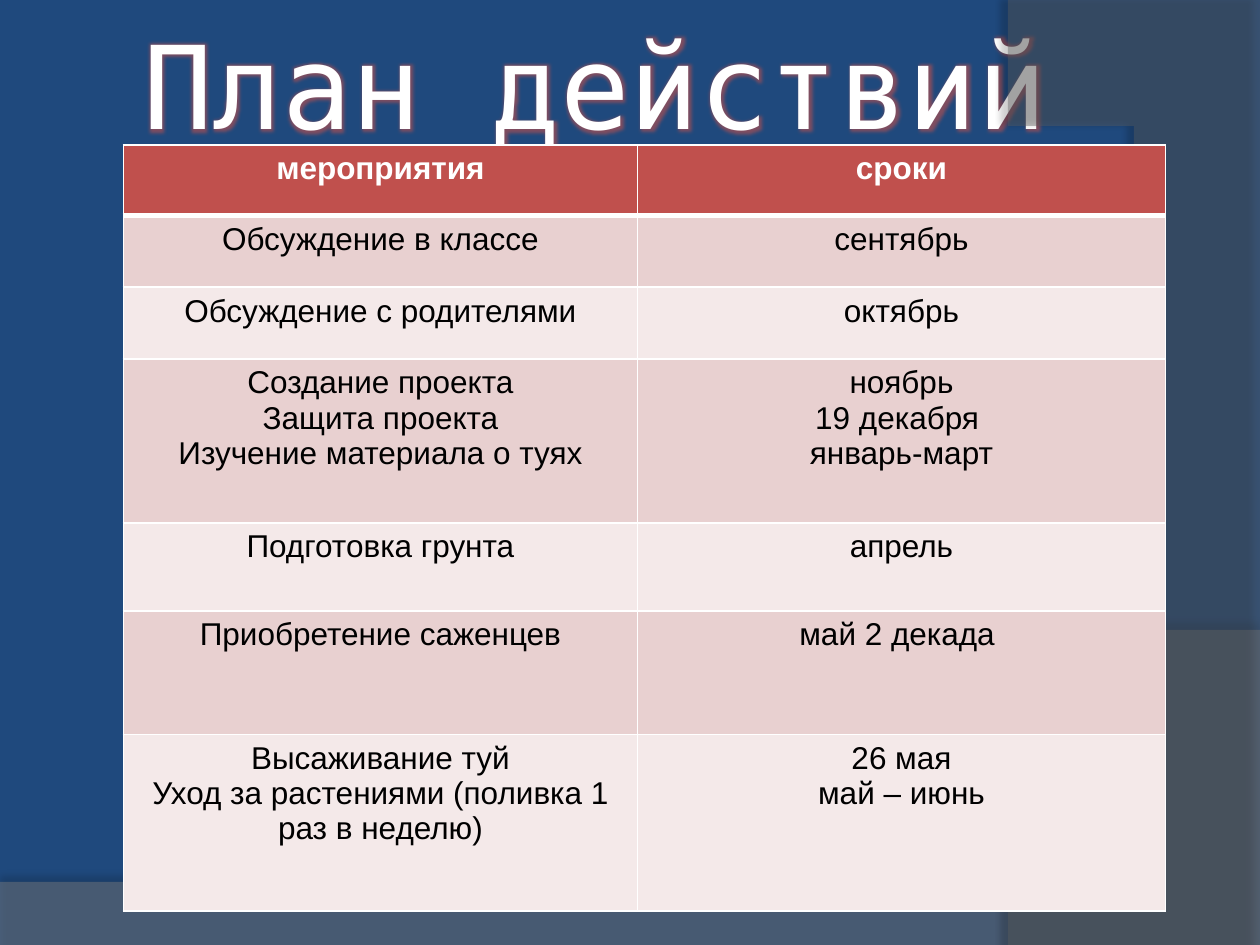
from lxml import etree
from pptx import Presentation
from pptx.dml.color import RGBColor
from pptx.enum.text import MSO_ANCHOR, PP_ALIGN
from pptx.oxml import parse_xml
from pptx.oxml.ns import qn
from pptx.util import Inches, Pt

CENTER = PP_ALIGN.CENTER
TOP = MSO_ANCHOR.TOP
DRAWING = "http://schemas.openxmlformats.org/drawingml/2006/main"

WIDTH, HEIGHT = 10, 7.5
TITLE = "План действий "
HEADER_COLOR, BAND_COLORS = "C0504D", ("E8D0D0", "F4E9E9")
ROWS = [
    (0.56, " мероприятия ", "сроки"),
    (0.57, "Обсуждение в классе", "сентябрь"),
    (0.57, "Обсуждение с родителями", "октябрь"),
    (1.3, "Создание проекта\nЗащита проекта\nИзучение материала о туях",
     "ноябрь\n19 декабря \nянварь-март"),
    (0.7, "Подготовка грунта", "апрель"),
    (0.98, "Приобретение саженцев", "май 2 декада "),
    (1.4, "Высаживание туй\nУход за растениями (поливка 1 раз в неделю)",
     "26 мая\nмай – июнь"),
]
COLUMN_WIDTHS = (4.08, 4.19)
TABLE_LEFT, TABLE_TOP = 0.98, 1.15

WAVES = [
    {"curve": [(10, 5.2), (5.59, 7.29), (3.91, 7.19), (0, 7.05)],
     "corners": [(0, 7.5), (10, 7.5)],
     "fill": "7F7F7F", "opacity": 45, "shadow": (35, 4, 3.5, 270)},
    {"curve": [(8.21, 7.5), (9.35, 6.19), (10.18, 3), (8, 0)],
     "corners": [(10, 0.02), (10, 7.5)],
     "fill": "5E5E5E", "opacity": 40, "shadow": (45, 4, 4, 180)},
]


def rgb(color):
    return RGBColor.from_string(color)


def color_xml(color, opacity=100):
    return (f'<a:srgbClr val="{color}"><a:alpha val="{opacity * 1000}"/>'
            '</a:srgbClr>')


def effect_list(content):
    return parse_xml(f'<a:effectLst xmlns:a="{DRAWING}">{content}</a:effectLst>')


def curve_points(controls, steps=60):
    for step in range(steps + 1):
        t = step / steps
        weights = ((1 - t) ** 3, 3 * t * (1 - t) ** 2, 3 * t * t * (1 - t), t ** 3)
        yield tuple(sum(w * point[axis] for w, point in zip(weights, controls))
                    for axis in (0, 1))


def add_wave(page, wave):
    points = list(curve_points(wave["curve"])) + wave["corners"]
    builder = page.shapes.build_freeform(*points[0], scale=Inches(1))
    builder.add_line_segments(points[1:], close=True)
    shape = builder.convert_to_shape()
    shape.fill.solid()
    shape.fill.fore_color.rgb = rgb(wave["fill"])
    color = shape.fill._xPr.find(qn("a:solidFill"))[0]
    etree.SubElement(color, qn("a:alpha"), val=str(wave["opacity"] * 1000))
    shape.line.fill.background()
    opacity, blur, distance, angle = wave["shadow"]
    shape._element.spPr.append(effect_list(
        f'<a:outerShdw blurRad="{Pt(blur)}" dist="{Pt(distance)}" '
        f'dir="{angle * 60000}" rotWithShape="0">'
        f'{color_xml("000000", opacity)}</a:outerShdw>'))


def add_title(page):
    title = page.shapes.title
    title.left, title.top = 0, 0
    title.width, title.height = Inches(WIDTH), Inches(1.75)
    frame = title.text_frame
    frame.word_wrap = True
    frame.vertical_anchor = TOP
    frame.margin_top = Inches(0.11)
    para = frame.paragraphs[0]
    para.alignment = CENTER
    span = para.add_run()
    span.text = TITLE
    span.font.size = Pt(66)
    span.font.name = "DejaVu Sans Mono"
    span.font.color.rgb = rgb("FFFFFF")
    glow = effect_list(f'<a:glow rad="{Pt(5)}">{color_xml(HEADER_COLOR, 60)}</a:glow>')
    span.font._element.find(qn("a:solidFill")).addnext(glow)


def set_borders(cell, top, bottom):
    properties = cell._tc.get_or_add_tcPr()
    sides = (("lnL", 1), ("lnR", 1), ("lnT", top), ("lnB", bottom))
    for index, (side, width) in enumerate(sides):
        properties.insert(index, parse_xml(
            f'<a:{side} xmlns:a="{DRAWING}" w="{Pt(width)}"><a:solidFill>'
            f'{color_xml("FFFFFF")}</a:solidFill></a:{side}>'))


def fill_cell(cell, text, row):
    header = row == 0
    cell.text = text
    cell.fill.solid()
    cell.fill.fore_color.rgb = rgb(HEADER_COLOR if header else BAND_COLORS[(row - 1) % 2])
    set_borders(cell, 3 if row == 1 else 1, 3 if header else 1)
    for para in cell.text_frame.paragraphs:
        para.alignment = CENTER
        para.font.size = Pt(18)
        para.font.name = "Arial"
        para.font.bold = header
        para.font.color.rgb = rgb("FFFFFF" if header else "000000")


def add_plan(page):
    heights = [row[0] for row in ROWS]
    table = page.shapes.add_table(
        len(ROWS), len(COLUMN_WIDTHS), Inches(TABLE_LEFT), Inches(TABLE_TOP),
        Inches(sum(COLUMN_WIDTHS)), Inches(sum(heights))).table
    for column, width in zip(table.columns, COLUMN_WIDTHS):
        column.width = Inches(width)
    for row, (height, *texts) in enumerate(ROWS):
        table.rows[row].height = Inches(height)
        for column, text in enumerate(texts):
            fill_cell(table.cell(row, column), text, row)


def main():
    deck = Presentation()
    deck.slide_width, deck.slide_height = Inches(WIDTH), Inches(HEIGHT)
    page = deck.slides.add_slide(deck.slide_layouts[5])
    page.background.fill.solid()
    page.background.fill.fore_color.rgb = rgb("1F497D")
    for wave in WAVES:
        add_wave(page, wave)
    add_title(page)
    add_plan(page)
    deck.save("out.pptx")


if __name__ == "__main__":
    main()
